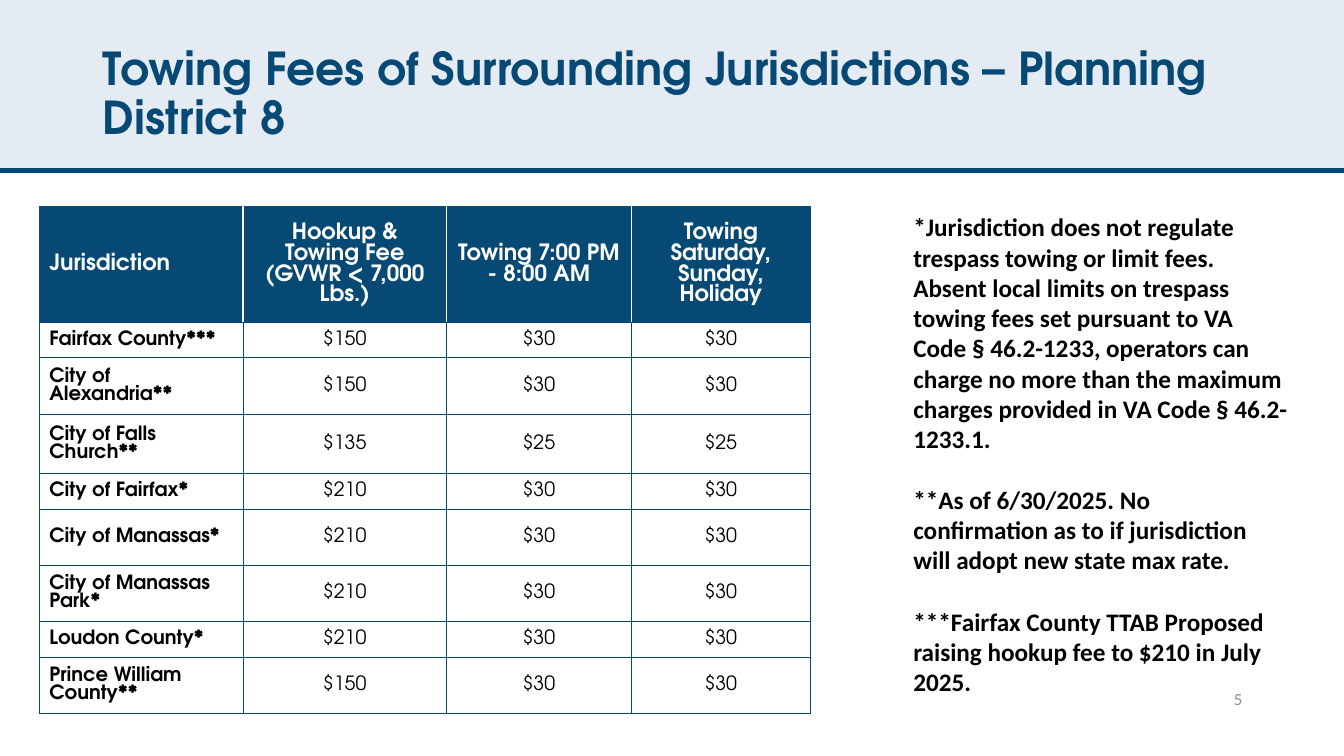
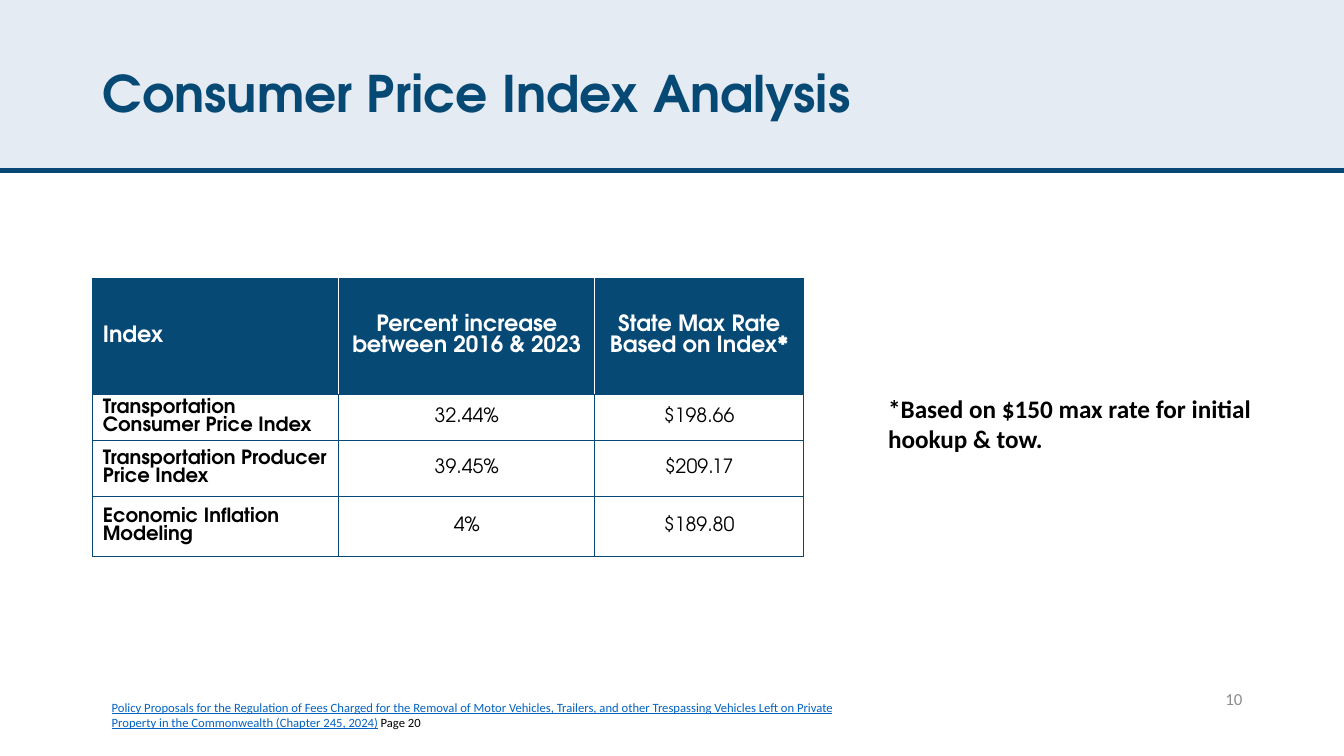
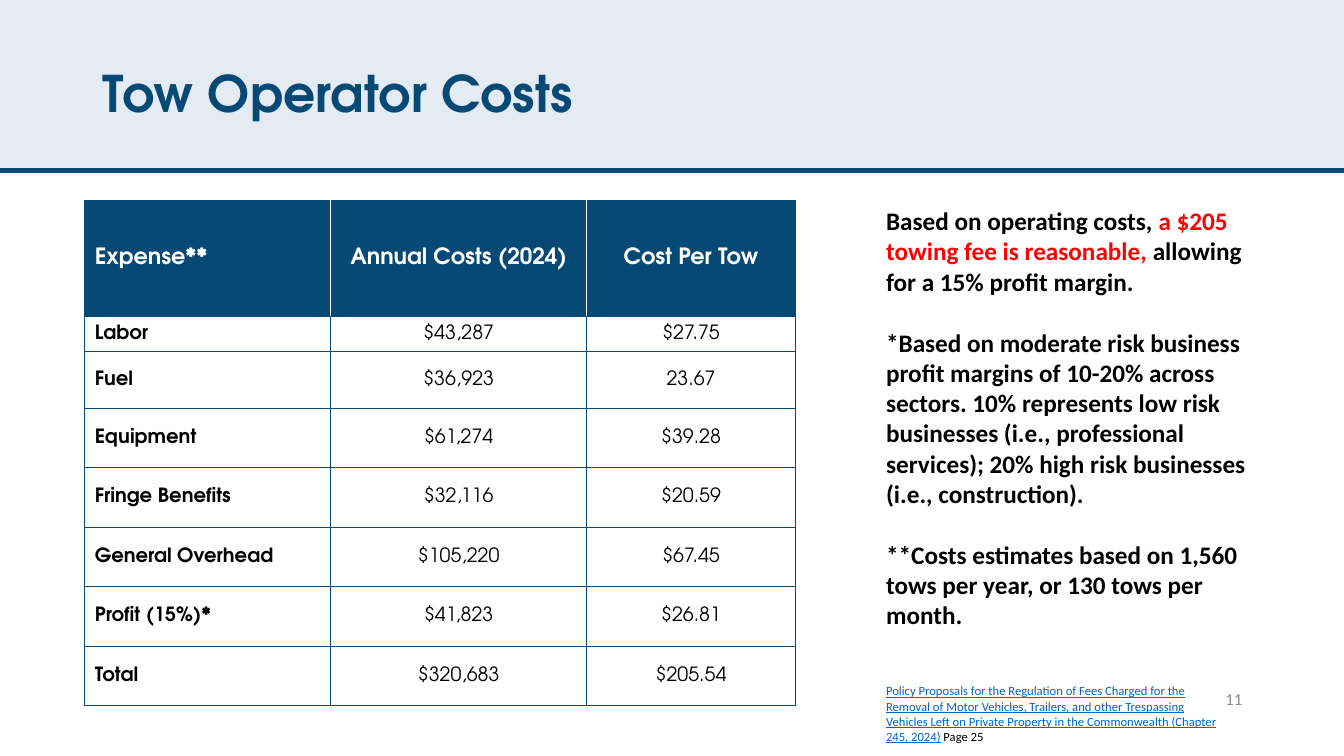
"""Build three slides on towing fees, price indexes and tow operator costs."""
from dataclasses import dataclass

from lxml.etree import SubElement
from pptx import Presentation
from pptx.dml.color import RGBColor as RGB
from pptx.enum.shapes import MSO_CONNECTOR as CONNECTOR, MSO_SHAPE as SHAPE
from pptx.enum.text import MSO_ANCHOR as ANCHOR, MSO_AUTO_SIZE as AUTOSIZE, PP_ALIGN as ALIGN
from pptx.oxml import parse_xml
from pptx.oxml.ns import nsdecls, qn
from pptx.util import Inches, Pt


@dataclass(frozen=True)
class Theme:
    navy: str = "074975"
    band: str = "E5EBF2"
    white: str = "FFFFFF"
    black: str = "000000"
    red: str = "FF0000"
    link: str = "0563C1"
    gray: str = "8C8C8C"
    display: str = "TeX Gyre Adventor"
    text: str = "Calibri"
    title: float = 36
    long_title: float = 32.4
    header: float = 16
    cell: float = 14
    note: float = 18
    number: float = 12
    source: float = 9
    cell_leading: float = 0.92


theme = Theme()


def style(paragraph, face, size, color, bold=False, align=ALIGN.LEFT):
    paragraph.alignment = align
    font = paragraph.font
    font.name, font.size, font.bold = face, Pt(size), bold
    font.color.rgb = RGB.from_string(color)


def add_text(slide, box, paragraphs, size, color=theme.black, bold=False,
             align=ALIGN.LEFT, anchor=ANCHOR.TOP, gap=0):
    frame = slide.shapes.add_textbox(*map(Inches, box)).text_frame
    frame.word_wrap, frame.vertical_anchor = True, anchor
    frame.auto_size = AUTOSIZE.NONE
    for index, runs in enumerate(paragraphs):
        paragraph = frame.add_paragraph() if index else frame.paragraphs[0]
        if index:
            paragraph.space_before = Pt(gap)
        for text, run_color in runs:
            run = paragraph.add_run()
            run.text = text
            if run_color:
                run.font.color.rgb = RGB.from_string(run_color)
                run.font.underline = True if run_color == theme.link else None
        style(paragraph, theme.text, size, color, bold, align)


policy = ("Policy Proposals for the Regulation of Fees Charged for the Removal of Motor Vehicles, "
          "Trailers, and other Trespassing Vehicles Left on Private Property in the Commonwealth "
          "(Chapter 245, 2024)")
pages = [
    dict(
        title="Towing Fees of Surrounding Jurisdictions – Planning District 8",
        title_size=theme.long_title,
        number=5,
        table_at=(0.39, 2.05),
        columns=[2.02, 2.02, 1.83, 1.78],
        heights=[1.15, 0.35, 0.56, 0.59, 0.35, 0.56, 0.56, 0.35, 0.56],
        rows=[
            ["Jurisdiction", "Hookup & Towing Fee (GVWR < 7,000 Lbs.)",
             "Towing 7:00 PM - 8:00 AM", "Towing Saturday, Sunday, Holiday"],
            ["Fairfax County***", "$150", "$30", "$30"],
            ["City of Alexandria**", "$150", "$30", "$30"],
            ["City of Falls Church**", "$135", "$25", "$25"],
            ["City of Fairfax*", "$210", "$30", "$30"],
            ["City of Manassas*", "$210", "$30", "$30"],
            ["City of Manassas Park*", "$210", "$30", "$30"],
            ["Loudon County*", "$210", "$30", "$30"],
            ["Prince William County**", "$150", "$30", "$30"],
        ],
        notes_at=(8.96, 2.05, 3.92, 4.95),
        notes=[
            [("*Jurisdiction does not regulate trespass towing or limit fees. Absent local limits "
              "on trespass towing fees set pursuant to VA Code § 46.2-1233, operators can charge "
              "no more than the maximum charges provided in VA Code § 46.2-1233.1.", None)],
            [("**As of 6/30/2025. No confirmation as to if jurisdiction will adopt new state "
              "max rate.", None)],
            [("***Fairfax County TTAB Proposed raising hookup fee to $210 in July 2025.", None)],
        ],
    ),
    dict(
        title="Consumer Price Index Analysis",
        title_size=theme.title,
        number=10,
        table_at=(0.92, 2.76),
        columns=[2.44, 2.54, 2.07],
        heights=[1.15, 0.35, 0.56, 0.59],
        rows=[
            ["Index", "Percent increase between 2016 & 2023", "State Max Rate Based on Index*"],
            ["Transportation Consumer Price Index", "32.44%", "$198.66"],
            ["Transportation Producer Price Index", "39.45%", "$209.17"],
            ["Economic Inflation Modeling", "4%", "$189.80"],
        ],
        notes_at=(8.71, 3.85, 3.92, 0.71),
        notes=[[("*Based on $150 max rate for initial hookup & tow.", None)]],
        source_at=(1.01, 6.89, 7.47, 0.4),
        source_page=" Page 20",
    ),
    dict(
        title="Tow Operator Costs",
        title_size=theme.title,
        number=11,
        table_at=(0.84, 1.99),
        columns=[2.44, 2.54, 2.07],
        heights=[1.15, 0.35, 0.56] + [0.59] * 5,
        rows=[
            ["Expense**", "Annual Costs (2024)", "Cost Per Tow"],
            ["Labor", "$43,287", "$27.75"],
            ["Fuel", "$36,923", "23.67"],
            ["Equipment", "$61,274", "$39.28"],
            ["Fringe Benefits", "$32,116", "$20.59"],
            ["General Overhead", "$105,220", "$67.45"],
            ["Profit (15%)*", "$41,823", "$26.81"],
            ["Total", "$320,683", "$205.54"],
        ],
        notes_at=(8.69, 1.99, 3.92, 4.34),
        notes=[
            [("Based on operating costs, ", None),
             ("a $205 towing fee is reasonable, ", theme.red),
             ("allowing for a 15% profit margin.", None)],
            [("*Based on moderate risk business profit margins of 10-20% across sectors. 10% "
              "represents low risk businesses (i.e., professional services); 20% high risk "
              "businesses (i.e., construction).", None)],
            [("**Costs estimates based on 1,560 tows per year, or 130 tows per month.", None)],
        ],
        source_at=(8.69, 6.73, 3.56, 0.71),
        source_page=" Page 25",
    ),
]

deck = Presentation()
deck.slide_width, deck.slide_height = Inches(13.33), Inches(7.5)
layout = deck.slide_layouts[5]
heading = layout.placeholders[0]
heading.left, heading.top, heading.width, heading.height = map(Inches, (0.92, 0.4, 11.5, 1.1))
slides = [deck.slides.add_slide(layout) for _ in pages]

band = slides[0].shapes.add_shape(SHAPE.RECTANGLE, 0, 0, deck.slide_width, Inches(1.7))
band.shadow.inherit = False
band.fill.solid()
band.fill.fore_color.rgb = RGB.from_string(theme.band)
band.line.fill.background()
rule = slides[0].shapes.add_connector(
    CONNECTOR.STRAIGHT, 0, Inches(1.69), deck.slide_width, Inches(1.69))
rule.line.color.rgb = RGB.from_string(theme.navy)
rule.line.width = Pt(3.5)
SubElement(rule.element.spPr, qn("a:effectLst"))
for position, part in enumerate((band, rule), start=2):
    layout.shapes.element.insert(position, part.element)

for slide, page in zip(slides, pages):
    title = slide.shapes.title.text_frame
    title.text = page["title"]
    title.word_wrap, title.vertical_anchor = True, ANCHOR.MIDDLE
    title.auto_size = AUTOSIZE.NONE
    title.paragraphs[0].line_spacing = 0.9
    style(title.paragraphs[0], theme.display, page["title_size"], theme.navy, True)

    columns, heights, rows = page["columns"], page["heights"], page["rows"]
    left, top = page["table_at"]
    table = slide.shapes.add_table(
        len(rows), len(columns), Inches(left), Inches(top),
        Inches(sum(columns)), Inches(sum(heights))).table
    table.horz_banding = False
    for column, width in zip(table.columns, columns):
        column.width = Inches(width)
    for r, values in enumerate(rows):
        table.rows[r].height = Inches(heights[r])
        is_header = r == 0
        size = theme.header if is_header else theme.cell
        for c, value in enumerate(values):
            cell = table.cell(r, c)
            cell.text = value
            cell.vertical_anchor = ANCHOR.MIDDLE
            cell.fill.solid()
            cell.fill.fore_color.rgb = RGB.from_string(theme.navy if is_header else theme.white)
            paragraph = cell.text_frame.paragraphs[0]
            paragraph.line_spacing = Pt(size * theme.cell_leading)
            style(paragraph, theme.display, size, theme.white if is_header else theme.black,
                  is_header or c == 0, ALIGN.CENTER if c else ALIGN.LEFT)
            inner = {"L": c > 0, "R": c < len(columns) - 1, "T": False, "B": False}
            for index, (side, between) in enumerate(inner.items()):
                color, width = (theme.white, 1) if is_header and between else (theme.navy, 0.75)
                cell._tc.get_or_add_tcPr().insert(index, parse_xml(
                    f'<a:ln{side} {nsdecls("a")} w="{Pt(width)}"><a:solidFill>'
                    f'<a:srgbClr val="{color}"/></a:solidFill></a:ln{side}>'))

    add_text(slide, (9.42, 6.73, 3, 0.4), [[(str(page["number"]), None)]], theme.number,
             theme.gray, align=ALIGN.RIGHT, anchor=ANCHOR.MIDDLE)
    add_text(slide, page["notes_at"], page["notes"], theme.note, bold=True, gap=22)
    if "source_at" in page:
        add_text(slide, page["source_at"], [[(policy, theme.link), (page["source_page"], None)]],
                 theme.source)

deck.save("out.pptx")
